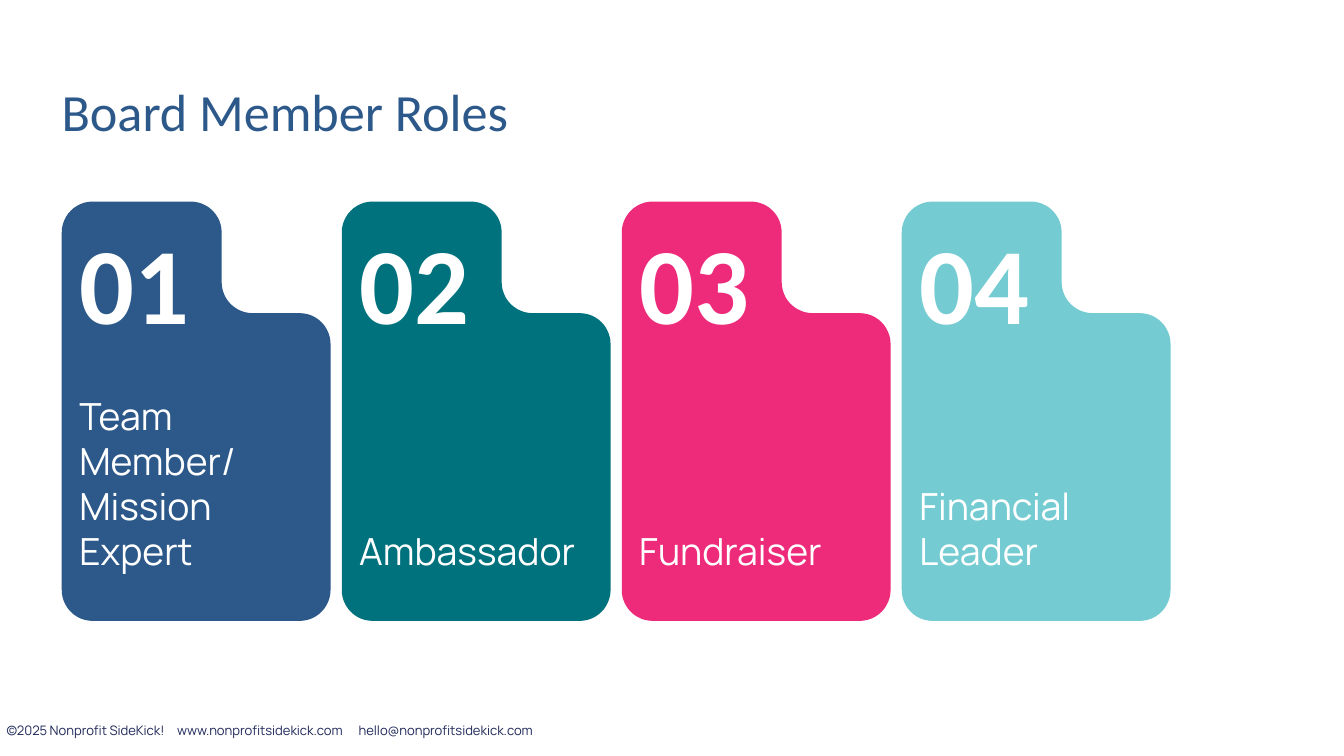
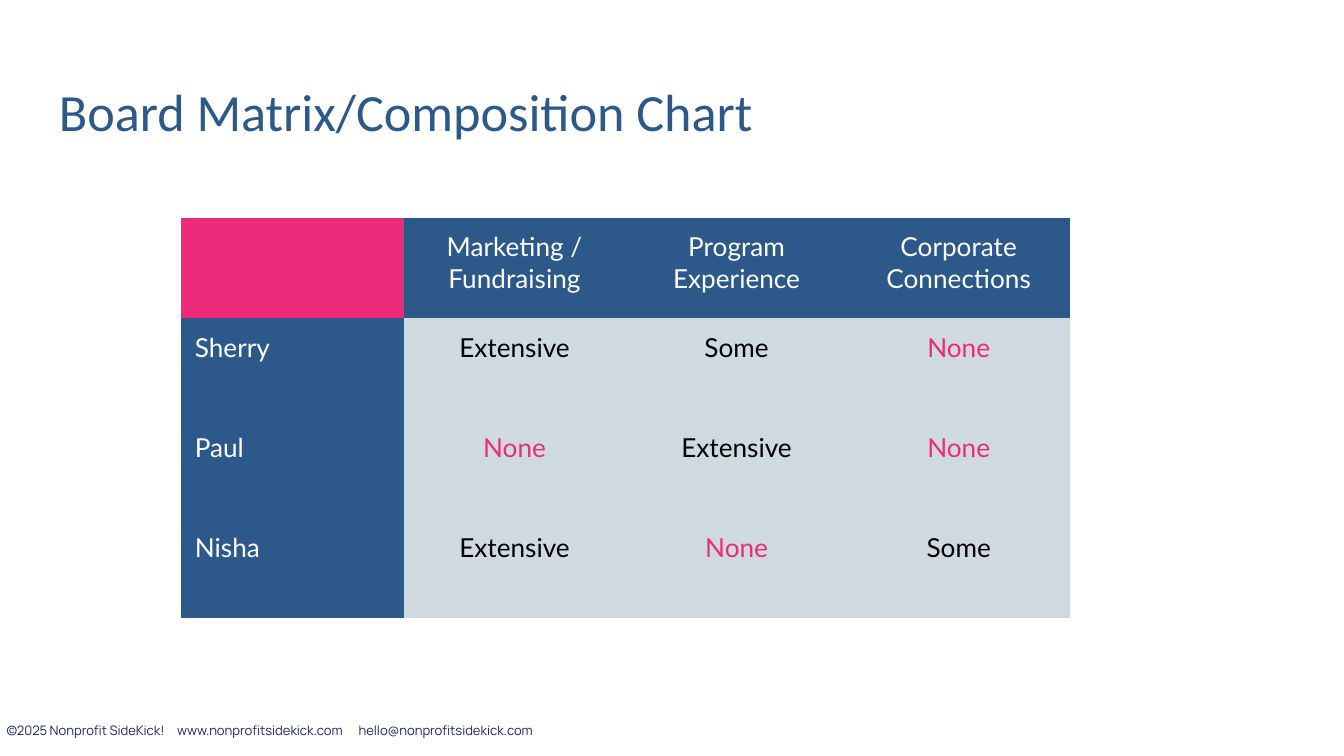
"""Build two slides on board member roles and board composition."""
from math import cos, radians, sin

from lxml import etree
from pptx import Presentation
from pptx.dml.color import RGBColor
from pptx.enum.text import MSO_ANCHOR, PP_ALIGN
from pptx.oxml.ns import qn
from pptx.util import Inches, Pt

BLUE = RGBColor(0x2C, 0x59, 0x8A)
TEAL = RGBColor(0x00, 0x72, 0x7D)
PINK = RGBColor(0xEE, 0x2A, 0x7B)
AQUA = RGBColor(0x74, 0xCC, 0xD2)
GREY = RGBColor(0xCF, 0xD9, 0xE0)
NAVY = RGBColor(0x20, 0x29, 0x59)
WHITE = RGBColor(0xFF, 0xFF, 0xFF)
BLACK = RGBColor(0x00, 0x00, 0x00)
TOP, BOTTOM = MSO_ANCHOR.TOP, MSO_ANCHOR.BOTTOM
LEFT, CENTER = PP_ALIGN.LEFT, PP_ALIGN.CENTER
NO_GRID_STYLE = "{2D5ABB26-0587-4C30-8999-92F81FD0307C}"
FOOTER = "©2025 Nonprofit SideKick!\twww.nonprofitsidekick.com\thello@nonprofitsidekick.com"
FOOTER_TABS = (1.27, 2.62)


def format_text(paragraph, font_name, size, color, bold=False):
    for span in paragraph.runs:
        span.font.name = font_name
        span.font.size = Pt(size)
        span.font.color.rgb = color
        span.font.bold = bold


def add_text(shapes, text, place, font_name, size, color, inset=(0.1, 0.1), anchor=TOP, bold=False):
    box = shapes.add_textbox(*[Inches(value) for value in place])
    frame = box.text_frame
    frame.word_wrap = True
    frame.vertical_anchor = anchor
    frame.margin_left = frame.margin_right = Inches(inset[0])
    frame.margin_top = frame.margin_bottom = Inches(inset[1])
    frame.text = text
    format_text(frame.paragraphs[0], font_name, size, color, bold)
    return frame.paragraphs[0]


deck = Presentation()
deck.slide_width = Inches(10)
deck.slide_height = deck.slide_width * 9 // 16

pages = []
for title, title_place in (
    ("Board Member Roles", (0.36, 0.49, 8.41, 0.59)),
    ("Board Matrix/Composition Chart", (0.34, 0.49, 9.32, 0.63)),
):
    page = deck.slides.add_slide(deck.slide_layouts[6])
    footer = add_text(page.shapes, FOOTER, (-0.05, 5.32, 7.28, 0.85), "Manrope", 7, NAVY)
    tab_list = etree.SubElement(footer._p.get_or_add_pPr(), qn("a:tabLst"))
    for position in FOOTER_TABS:
        etree.SubElement(tab_list, qn("a:tab"), pos=str(Inches(position)), algn="l")
    add_text(page.shapes, title, title_place, "Calibri", 28, BLUE)
    pages.append(page)
roles_page, matrix_page = pages

CARD_LEFT, CARD_TOP, CARD_PITCH = 0.46, 1.5, 6.25 / 3
CARD_WIDTH, CARD_HEIGHT = 2, 3.12
TAB_WIDTH, TAB_HEIGHT, RADIUS = 1.19, 0.83, 0.23
ARC_STEPS = 12
CORNERS = (
    (RADIUS, RADIUS, 180, 90),
    (TAB_WIDTH - RADIUS, RADIUS, 270, 90),
    (TAB_WIDTH + RADIUS, TAB_HEIGHT - RADIUS, 180, -90),
    (CARD_WIDTH - RADIUS, TAB_HEIGHT + RADIUS, 270, 90),
    (CARD_WIDTH - RADIUS, CARD_HEIGHT - RADIUS, 0, 90),
    (RADIUS, CARD_HEIGHT - RADIUS, 90, 90),
)
outline = []
for center_x, center_y, start, sweep in CORNERS:
    for step in range(ARC_STEPS + 1):
        angle = radians(start + sweep * step / ARC_STEPS)
        outline.append((center_x + RADIUS * cos(angle), center_y + RADIUS * sin(angle)))

ROLES = (
    ("Team Member/ Mission Expert", BLUE),
    ("Ambassador", TEAL),
    ("Fundraiser", PINK),
    ("Financial Leader", AQUA),
)
for index, (role, color) in enumerate(ROLES):
    left = CARD_LEFT + index * CARD_PITCH
    card_shapes = roles_page.shapes.add_group_shape().shapes
    points = [(Inches(left + x), Inches(CARD_TOP + y)) for x, y in outline]
    builder = card_shapes.build_freeform(*points[0])
    builder.add_line_segments(points[1:], close=True)
    card = builder.convert_to_shape()
    card.shadow.inherit = False
    card.fill.solid()
    card.fill.fore_color.rgb = color
    card.line.fill.background()
    add_text(card_shapes, role, (left + 0.13, 2.59, 1.73, 1.69),
             "Manrope", 20, WHITE, (0, 0.02), BOTTOM)
    add_text(card_shapes, f"{index + 1:02}", (left + 0.13, 1.61, 0.95, 0.98),
             "Calibri", 58, WHITE, (0, 0), bold=True)

MATRIX = (
    ("", "Marketing / Fundraising", "Program Experience", "Corporate Connections"),
    ("Sherry", "Extensive", "Some", "None"),
    ("Paul", "None", "Extensive", "None"),
    ("Nisha", "Extensive", "None", "Some"),
)
TABLE_WIDTH, TABLE_HEIGHT = Inches(6.61), Inches(2.98)
row_count, column_count = len(MATRIX), len(MATRIX[0])
table = matrix_page.shapes.add_table(
    row_count, column_count, Inches(1.35), Inches(1.62), TABLE_WIDTH, TABLE_HEIGHT).table
table.horz_banding = False
table._tbl.tblPr.find(qn("a:tableStyleId")).text = NO_GRID_STYLE

for row_index, values in enumerate(MATRIX):
    for column_index, value in enumerate(values):
        cell = table.cell(row_index, column_index)
        cell.margin_left = cell.margin_right = Inches(0.1)
        cell.margin_top = cell.margin_bottom = Inches(0.1)
        if row_index and column_index:
            fill, color = GREY, PINK if value == "None" else BLACK
        else:
            fill, color = BLUE if value else PINK, WHITE
        cell.fill.solid()
        cell.fill.fore_color.rgb = fill
        cell.text_frame.text = value
        paragraph = cell.text_frame.paragraphs[0]
        paragraph.alignment = CENTER if column_index else LEFT
        format_text(paragraph, "Lato", 14, color)

deck.save("out.pptx")
